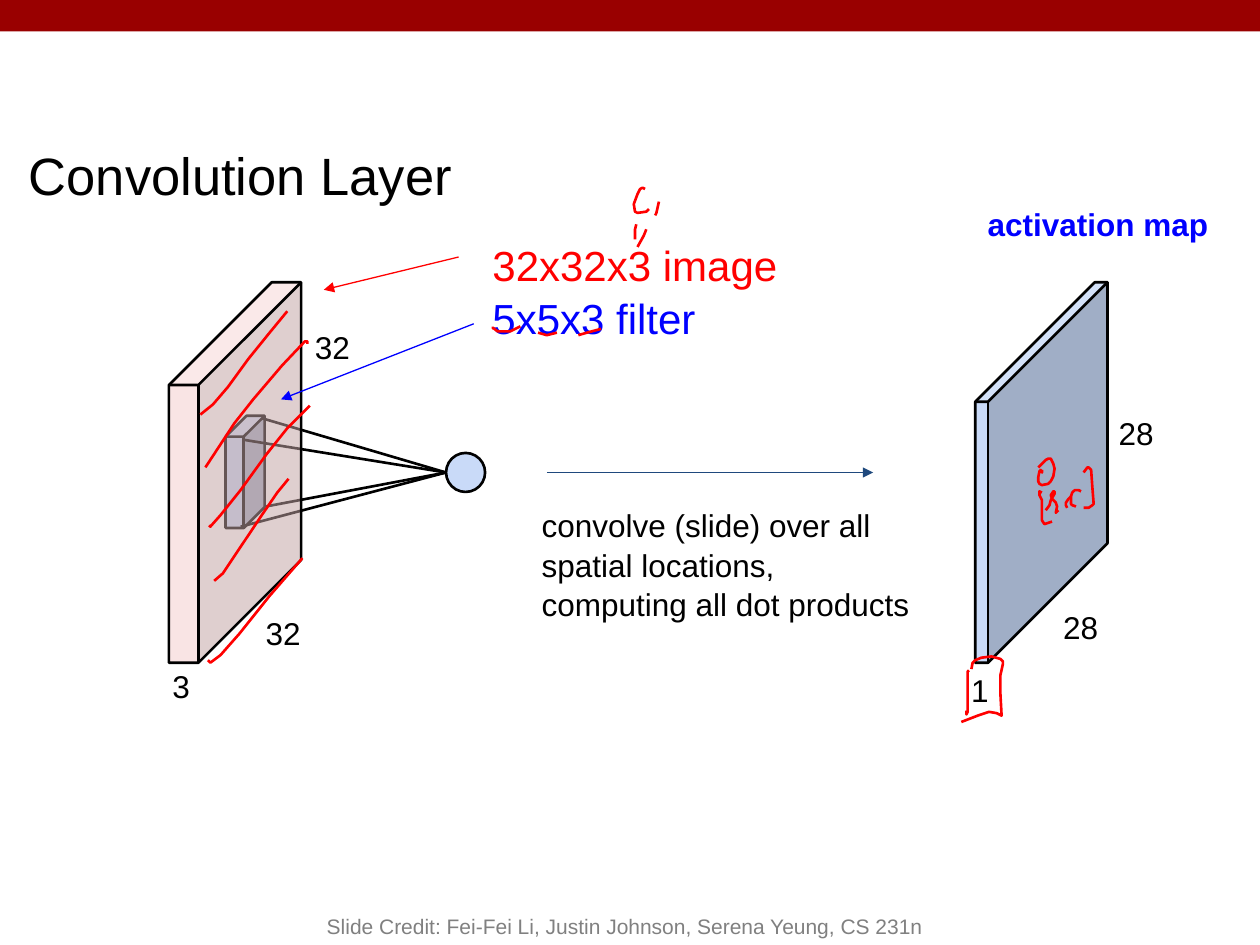
from lxml import etree
from pptx import Presentation
from pptx.dml.color import RGBColor
from pptx.enum.shapes import MSO_CONNECTOR as CONNECTOR, MSO_SHAPE as SHAPE
from pptx.enum.text import MSO_ANCHOR as ANCHOR, PP_ALIGN as ALIGN
from pptx.oxml.ns import qn
from pptx.util import Inches, Pt

COLORS = {
    "banner": "990000", "black": "000000", "red": "FF0000", "blue": "0000FF",
    "navy": "1F497D", "sky": "C9DAF8", "pink": "F4CCCC", "gray": "808080",
}

# Pen strokes, in hundredths of an inch from the corner of their region
HATCHING = [
    [(31, 300), (33, 302), (41, 296), (56, 279), (80, 249), (106, 219)],
    [(36, 237), (43, 231), (53, 216), (73, 186), (86, 167), (95, 156)],
    [(32, 193), (33, 194), (41, 185), (57, 165), (78, 136), (94, 116), (112, 98)],
    [(29, 147), (33, 141), (52, 112), (67, 93), (90, 66), (108, 47), (110, 47), (110, 49)],
    [(25, 105), (35, 97), (47, 83), (63, 61), (80, 40), (94, 23)],
]
MAP_NOTES = [
    # right and left bracket
    [(86, 151), (89, 147), (90, 147), (92, 149), (93, 163), (94, 176), (93, 177),
     (90, 179), (86, 179)],
    [(53, 167), (51, 166), (51, 169), (53, 173), (53, 189), (55, 192), (61, 190)],
    # letters between the brackets
    [(84, 166), (82, 165), (79, 165), (77, 167), (76, 170), (76, 176), (77, 177), (80, 178)],
    [(76, 170), (74, 172), (72, 175), (72, 177), (73, 179)],
    [(56, 181), (59, 177), (60, 173), (63, 168), (63, 166), (62, 166), (60, 169),
     (61, 172), (64, 175), (65, 178), (64, 183), (66, 181)],
    # zero above
    [(53, 149), (53, 151), (52, 149), (51, 150), (50, 155), (50, 158), (51, 160),
     (53, 161), (58, 160), (60, 158), (62, 154), (63, 148), (62, 144), (60, 140),
     (58, 140), (56, 141), (50, 147)],
    # frame around the depth
    [(-3, 307), (-2, 302), (0, 300), (5, 298), (13, 297), (20, 299), (22, 301),
     (22, 303), (20, 312), (20, 326), (21, 344), (17, 342), (11, 341), (2, 344), (-11, 349)],
    [(-5, 308), (-6, 309), (-6, 341), (-7, 343), (-7, 340)],
]
SIZE_NOTES = [
    # underlines of the filter size
    [(11, 83), (10, 82), (14, 85), (24, 85), (32, 81)],
    [(46, 86), (53, 88), (61, 86)],
    [(78, 88), (85, 86), (96, 83)],
    # C, and two ticks above the depth
    [(131, -28), (129, -29), (127, -28), (125, -24), (122, -16), (123, -10),
     (125, -9), (132, -10), (134, -12)],
    [(142, -18), (140, -9), (139, -7)],
    [(124, 0), (123, 4), (123, 12)],
    [(132, 4), (130, 9), (125, 18)],
]


def rgb(name):
    return RGBColor.from_string(COLORS[name])


def add_solid(slide, kind, box, fill, outlined=True, adj=None, opacity=None):
    solid = slide.shapes.add_shape(kind, *map(Inches, box))
    solid.shadow.inherit = False
    solid.fill.solid()
    solid.fill.fore_color.rgb = rgb(fill)
    if outlined:
        solid.line.color.rgb = rgb("black")
        solid.line.width = Pt(1.5)
    else:
        solid.line.fill.background()
    if adj is not None:
        solid.adjustments[0] = adj
    if opacity is not None:
        color = solid.fill._xPr.find(f"{qn('a:solidFill')}/{qn('a:srgbClr')}")
        etree.SubElement(color, qn("a:alpha")).set("val", str(opacity * 1000))


def add_line(slide, start, end, color="black", width=1.5, arrow=False):
    line = slide.shapes.add_connector(CONNECTOR.STRAIGHT, *map(Inches, start + end))
    line.line.color.rgb = rgb(color)
    line.line.width = Pt(width)
    if arrow:
        etree.SubElement(line.line._get_or_add_ln(), qn("a:tailEnd")).set("type", "triangle")
    etree.SubElement(line._element.spPr, qn("a:effectLst"))


def add_text(slide, box, lines, size=18, colors=("black",), bold=False,
             align=ALIGN.LEFT, anchor=ANCHOR.TOP, inset=0.1):
    frame = slide.shapes.add_textbox(*map(Inches, box)).text_frame
    frame.word_wrap = True
    frame.vertical_anchor = anchor
    frame.margin_left = frame.margin_right = Inches(0.1)
    frame.margin_top = frame.margin_bottom = Inches(inset)
    frame.text = lines
    for paragraph, color in zip(frame.paragraphs, colors):
        paragraph.alignment = align
        paragraph.line_spacing = 1.05
        for run in paragraph.runs:
            run.font.name = "Arial"
            run.font.size = Pt(size)
            run.font.bold = bold
            run.font.color.rgb = rgb(color)


def add_ink(slide, x, y, strokes):
    for first, *rest in strokes:
        builder = slide.shapes.build_freeform(*first, scale=float(Inches(0.01)))
        builder.add_line_segments(rest, close=False)
        stroke = builder.convert_to_shape(Inches(x), Inches(y))
        stroke.shadow.inherit = False
        stroke.fill.background()
        stroke.line.color.rgb = rgb("red")
        stroke.line.width = Pt(1.5)


def add_filter(slide, x, y, w, h):
    """Filter block whose corners run to one neuron."""
    add_solid(slide, SHAPE.CUBE, (x, y, w, h), "sky", adj=0.534)
    radius = 0.155
    neuron = (x + 1.75, y + 0.45)
    add_solid(slide, SHAPE.OVAL, (neuron[0], neuron[1] - radius, 2 * radius, 2 * radius), "sky")
    for dx, dy in [(0.12, 0.88), (0.14, 0.19), (0.29, 0.02), (0.32, 0.72)]:
        add_line(slide, (x + dx, y + dy), neuron)


def add_input_volume(slide, x, y, w, h):
    add_solid(slide, SHAPE.CUBE, (x, y, w, h), "pink", adj=0.777, opacity=52)
    for dx, dy, label in [(0.67, 2.52, "32"), (1.06, 0.25, "32"), (-0.07, 2.94, "3")]:
        add_text(slide, (x + dx, y + dy, 0.54, 0.34), label)
    add_ink(slide, x, y, HATCHING)


def add_size_labels(slide, x, y, w, h):
    """Sizes of image and filter, with arrows to both."""
    add_text(slide, (x, y, w, h), "32x32x3 image\n5x5x3 filter", 24, ("red", "blue"))
    add_line(slide, (x - 0.17, y + 0.26), (x - 1.24, y + 0.52), "red", 0.75, arrow=True)
    add_line(slide, (x - 0.05, y + 0.79), (x - 1.58, y + 1.39), "blue", 0.75, arrow=True)
    add_ink(slide, x, y, SIZE_NOTES)


def add_operation(slide, x, y, w, h):
    add_line(slide, (x + 0.14, y - 0.15), (x + 2.73, y - 0.15), "navy", 0.75, arrow=True)
    add_text(slide, (x, y, w, h),
             "convolve (slide) over all spatial locations, \vcomputing all dot products")


def add_activation_map(slide, x, y, w, h):
    add_solid(slide, SHAPE.CUBE, (x, y, w, h), "sky", adj=0.904)
    add_text(slide, (x, y - 0.73, 1.97, 0.59), "activation map", colors=("blue",), bold=True)
    for dx, dy, width, label in [(-0.13, 2.97, 0.36, "1"), (0.6, 2.47, 0.54, "28"),
                                 (1.04, 0.93, 0.54, "28")]:
        add_text(slide, (x + dx, y + dy, width, 0.34), label)
    add_ink(slide, x, y, MAP_NOTES)


def main():
    deck = Presentation()
    deck.slide_width, deck.slide_height = Inches(10), Inches(7.5)
    slide = deck.slides.add_slide(deck.slide_layouts[6])

    # Banner and title
    add_solid(slide, SHAPE.RECTANGLE, (0, 0, 10, 0.25), "banner", outlined=False)
    add_text(slide, (0.13, 1.01, 8.42, 0.69), "Convolution Layer", 30)

    # Diagram, from left to right
    add_filter(slide, 1.79, 3.3, 0.31, 0.89)
    add_input_volume(slide, 1.34, 2.24, 1.05, 3.02)
    add_size_labels(slide, 3.81, 1.78, 3.98, 0.6)
    add_operation(slide, 4.2, 3.9, 3.58, 0.89)
    add_activation_map(slide, 7.74, 2.24, 1.05, 3.02)

    # Credit
    add_text(slide, (2, 7, 5.92, 0.5),
             "Slide Credit: Fei-Fei Li, Justin Johnson, Serena Yeung, CS 231n",
             12, ("gray",), align=ALIGN.CENTER, anchor=ANCHOR.BOTTOM, inset=0.05)
    deck.save("out.pptx")


if __name__ == "__main__":
    main()
